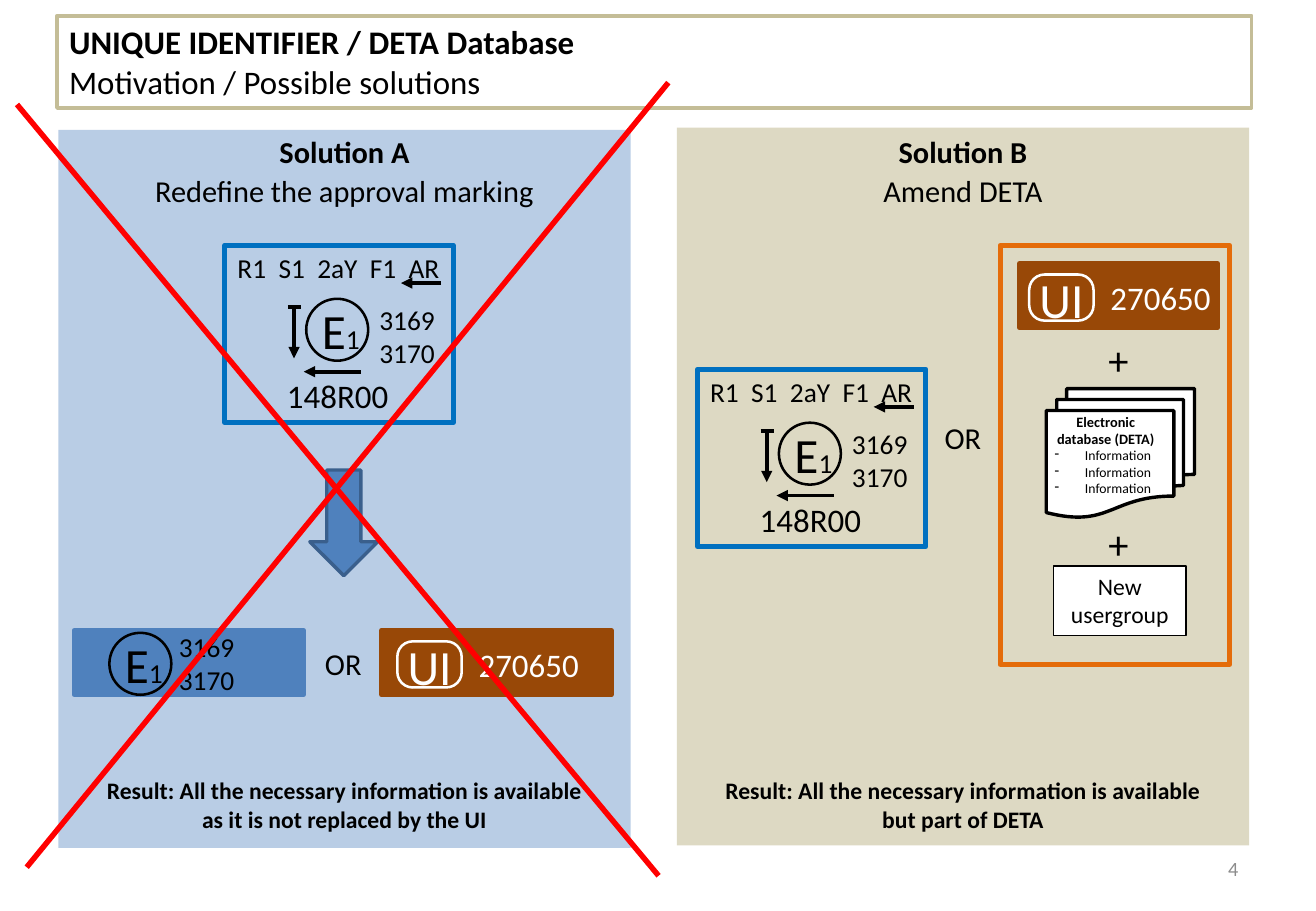
from dataclasses import dataclass
from typing import Optional, Sequence

from lxml import etree
from pptx import Presentation
from pptx.dml.color import RGBColor
from pptx.enum.shapes import MSO_CONNECTOR, MSO_SHAPE
from pptx.enum.text import MSO_ANCHOR, PP_ALIGN
from pptx.oxml.ns import qn
from pptx.util import Inches, Pt

LEFT, CENTER, RIGHT = PP_ALIGN.LEFT, PP_ALIGN.CENTER, PP_ALIGN.RIGHT
TOP, MIDDLE = MSO_ANCHOR.TOP, MSO_ANCHOR.MIDDLE
RECTANGLE, ROUNDED, OVAL = MSO_SHAPE.RECTANGLE, MSO_SHAPE.ROUNDED_RECTANGLE, MSO_SHAPE.OVAL
DOWN_ARROW, DOCUMENTS = MSO_SHAPE.DOWN_ARROW, MSO_SHAPE.FLOWCHART_MULTIDOCUMENT
STRAIGHT = MSO_CONNECTOR.STRAIGHT

FONT = "Calibri"
COLORS = {
    "black": "000000", "white": "FFFFFF", "grey": "8C8C8C", "red": "FF0000",
    "sky": "B9CDE5", "sand": "DDD9C3", "tan": "C4BD97", "blue": "4F81BD",
    "navy": "3A5F8C", "azure": "0070C0", "brown": "984807", "orange": "E46C0A",
}


@dataclass
class Line:
    text: str
    size: float
    bold: bool = False
    bullet: bool = False


@dataclass
class Panel:
    left: float
    top: float
    fill: str
    heading: str
    subtitle: str
    result: str
    marking: tuple[float, float]


PANELS = [
    Panel(5.57, 1.05, "sand", "Solution B", "Amend DETA", "but part of DETA", (5.74, 3.04)),
    Panel(0.48, 1.07, "sky", "Solution A", "Redefine the approval marking",
          "as it is not replaced by the UI", (1.85, 2.02)),
]

presentation = Presentation()
presentation.slide_width, presentation.slide_height = Inches(10.83), Inches(7.5)
slide = presentation.slides.add_slide(presentation.slide_layouts[6])


def rgb(name: str) -> RGBColor:
    return RGBColor.from_string(COLORS[name])


def write(shape, lines: Sequence[Line], align=CENTER, color: str = "black",
          anchor=TOP, wrap: bool = True) -> None:
    frame = shape.text_frame
    frame.word_wrap = wrap
    frame.vertical_anchor = anchor
    for index, line in enumerate(lines):
        paragraph = frame.add_paragraph() if index else frame.paragraphs[0]
        paragraph.text = line.text
        paragraph.alignment = LEFT if line.bullet else align
        font = paragraph.font
        font.name, font.size, font.bold = FONT, Pt(line.size), line.bold
        font.color.rgb = rgb(color)
        if line.bullet:
            properties = paragraph._p.get_or_add_pPr()
            properties.set("marL", str(Inches(0.25)))
            properties.set("indent", str(-Inches(0.25)))
            bullet = etree.Element(qn("a:buChar"), char="-")
            properties.insert(0, bullet)


def add_text(left: float, top: float, width: float, height: float,
             lines: Sequence[Line], align=CENTER, color: str = "black",
             anchor=TOP, wrap: bool = True):
    shape = slide.shapes.add_textbox(Inches(left), Inches(top), Inches(width), Inches(height))
    write(shape, lines, align, color, anchor, wrap)
    return shape


def add_box(kind, left: float, top: float, width: float, height: float,
            fill: Optional[str] = None, line: Optional[str] = None, weight: float = 3):
    shape = slide.shapes.add_shape(kind, Inches(left), Inches(top), Inches(width), Inches(height))
    shape.shadow.inherit = False
    if fill:
        shape.fill.solid()
        shape.fill.fore_color.rgb = rgb(fill)
    else:
        shape.fill.background()
    if line:
        shape.line.color.rgb = rgb(line)
        shape.line.width = Pt(weight)
    else:
        shape.line.fill.background()
    return shape


def add_line(x1: float, y1: float, x2: float, y2: float, color: str = "black",
             weight: float = 2.25, arrow: bool = False) -> None:
    connector = slide.shapes.add_connector(
        STRAIGHT, Inches(x1), Inches(y1), Inches(x2), Inches(y2))
    connector.line.color.rgb = rgb(color)
    connector.line.width = Pt(weight)
    if arrow:
        etree.SubElement(connector.line._get_or_add_ln(), qn("a:tailEnd"), type="triangle")
    etree.SubElement(connector._element.spPr, qn("a:effectLst"))


def add_approval_mark(left: float, top: float, numbers_dx: float, numbers_dy: float) -> None:
    """Circled E1 with the two approval numbers beside it."""
    letter = add_text(left + 0.03, top - 0.04, 0.56, 0.59, [Line("E", 29.2)], LEFT)
    digit = letter.text_frame.paragraphs[0].add_run()
    digit.text, digit.font.size = "1", Pt(16.2)
    add_box(OVAL, left, top, 0.51, 0.51, line="black", weight=1.5)
    add_text(left + numbers_dx, top + numbers_dy, 0.66, 0.65,
             [Line("3169", 16.2), Line("3170", 16.2)], wrap=False)


def add_marking(left: float, top: float) -> None:
    """Full approval marking in a blue frame."""
    add_box(RECTANGLE, left, top, 1.88, 1.46, line="azure")
    add_text(left - 0.01, top, 1.89, 0.37, [Line("R1  S1  2aY  F1  AR", 16.2)])
    add_approval_mark(left + 0.67, top + 0.44, 0.5, -0.01)
    code = add_text(left + 0.36, top + 1.01, 1.14, 0.43, [Line("148R00", 19.5)])
    code.text_frame.paragraphs[0].line_spacing = Pt(24.4)
    add_line(left + 1.78, top + 0.31, left + 1.45, top + 0.31, arrow=True)
    add_line(left + 0.57, top + 0.51, left + 0.57, top + 0.93, arrow=True)
    add_line(left + 0.52, top + 0.51, left + 0.63, top + 0.51)
    add_line(left + 1.12, top + 1.04, left + 0.65, top + 1.04, arrow=True)


def add_identifier(left: float, top: float, width: float, inset: float) -> None:
    """Brown bar with the UI badge and its number."""
    add_box(RECTANGLE, left, top, width, 0.53, "brown", "brown")
    x, y = left + inset, top + 0.09
    badge = add_box(ROUNDED, x, y, 0.53, 0.38, "brown", "white", 1.5)
    badge.adjustments[0] = 0.334
    add_text(x - 0.06, y - 0.09, 0.65, 0.59, [Line("UI", 29.2)], color="white")
    add_text(x + 0.57, y - 0.02, 1.18, 0.43, [Line("270650", 19.5)], LEFT, "white")


# Title and page number
title = add_box(RECTANGLE, 0.47, 0.13, 9.83, 0.76, line="tan", weight=2.25)
write(title, [Line("UNIQUE IDENTIFIER / DETA Database", 19.5, True),
              Line("Motivation / Possible solutions", 19.5)], LEFT)
add_text(7.76, 6.95, 2.53, 0.4, [Line("4", 12)], RIGHT, "grey", MIDDLE)

# Both solution panels
for panel in PANELS:
    add_box(RECTANGLE, panel.left, panel.top, 4.71, 5.91, panel.fill)
    add_text(panel.left, 1.05, 4.71, 0.4, [Line(panel.heading, 18, True)])
    add_text(panel.left, 1.37, 4.71, 0.4, [Line(panel.subtitle, 18)])
    add_text(panel.left, 6.34, 4.71, 0.59, [
        Line("Result: All the necessary information is available", 14, True),
        Line(panel.result, 14, True)])
    add_marking(*panel.marking)

# Solution A: replacement markings
add_box(DOWN_ARROW, 2.55, 3.87, 0.56, 0.87, "blue", "navy", 2)
add_box(RECTANGLE, 0.61, 5.19, 1.89, 0.53, "blue", "blue")
add_approval_mark(0.9, 5.21, 0.47, -0.07)
add_identifier(3.14, 5.19, 1.89, 0.13)

# Solution B: identifier, database and user group
add_identifier(8.39, 2.17, 1.63, 0.08)
add_box(DOCUMENTS, 8.61, 3.2, 1.22, 1.06, "white", "black", 2)
add_text(8.58, 3.35, 1.04, 0.8, [Line("Electronic database (DETA)", 8.5, True)]
         + [Line("Information", 8.1, bullet=True)] * 3)
user_group = add_box(RECTANGLE, 8.67, 4.66, 1.09, 0.57, "white", "black", 0.75)
write(user_group, [Line("New usergroup", 14)])
add_box(RECTANGLE, 8.23, 2.02, 1.89, 3.45, line="orange")

# Joining words and signs
for text, size, left, top in [("OR", 18, 2.56, 5.26), ("OR", 18, 7.66, 3.4),
                              ("+", 24, 8.94, 2.71), ("+", 24, 8.94, 4.22)]:
    add_text(left, top, 0.53, 0.5, [Line(text, size)])

# Red cross over solution A
add_line(0.14, 0.86, 5.42, 7.21, "red", 3.25)
add_line(5.5, 0.68, 0.22, 7.14, "red", 3.25)

presentation.save("out.pptx")
